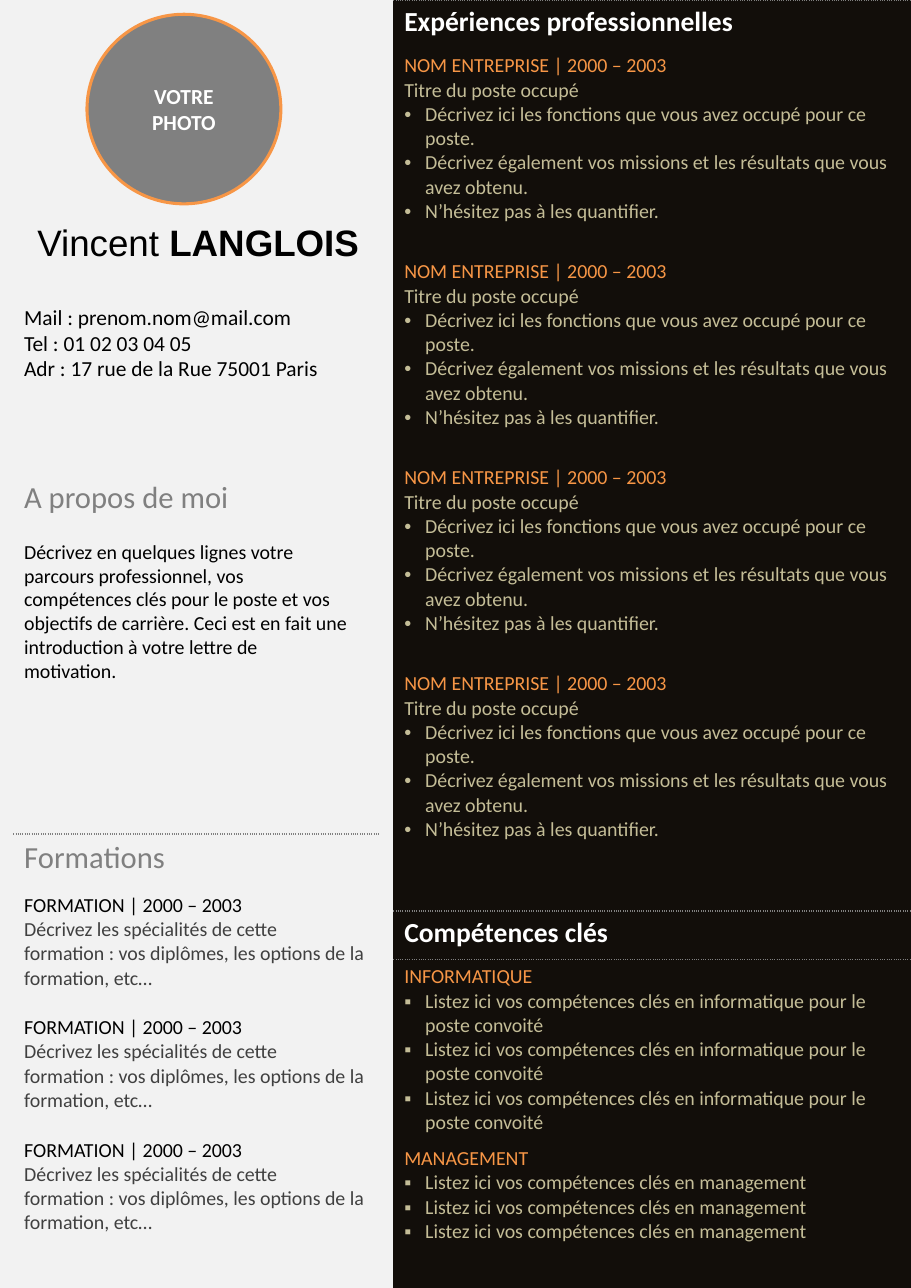
from lxml import etree
from pptx import Presentation
from pptx.dml.color import RGBColor
from pptx.enum.shapes import MSO_CONNECTOR, MSO_SHAPE
from pptx.enum.text import MSO_ANCHOR, PP_ALIGN
from pptx.oxml.ns import qn
from pptx.util import Pt

LINE = MSO_CONNECTOR.STRAIGHT
RECT, OVAL = MSO_SHAPE.RECTANGLE, MSO_SHAPE.OVAL
MIDDLE, CENTER = MSO_ANCHOR.MIDDLE, PP_ALIGN.CENTER
PLAIN = "{2D5ABB26-0587-4C30-8999-92F81FD0307C}"  # table style without grid

WIDE, HIGH = 595.44, 841.68
SPLIT = 257.04
HEAD, JOB, GAP = 31.68, 134.64, 25.2
INDENT = 13.68

COLORS = {
    "panel": "F2F2F2", "night": "120E0A", "accent": "F79646",
    "sand": "C4BD97", "gray": "808080", "rule": "7F7F7F",
    "dark": "404040", "black": "000000", "white": "FFFFFF",
}


def tint(name):
    return RGBColor.from_string(COLORS[name])


class Page:
    def __init__(self, slide, font="Calibri", size=13):
        self.shapes = slide.shapes
        self.font, self.size = font, size

    def span(self, par, text, color="black", size=None, bold=False, font=None):
        """Add one formatted run to a paragraph."""
        run = par.add_run()
        run.text = text
        run.font.name = font or self.font
        run.font.size = Pt(size or self.size)
        run.font.bold = bold
        run.font.color.rgb = tint(color)

    def text(self, frame, text, bullet=None, align=None, before=0, **style):
        """Add one paragraph, using the empty first one if it is free."""
        par = frame.paragraphs[-1]
        if par.runs:
            par = frame.add_paragraph()
        if align is not None:
            par.alignment = align
        if before:
            par.space_before = Pt(before)
        if bullet:
            props = par._p.get_or_add_pPr()
            props.set("marL", str(Pt(INDENT)))
            props.set("indent", str(-Pt(INDENT)))
            etree.SubElement(props, qn("a:buFont"), typeface="Arial")
            etree.SubElement(props, qn("a:buChar"), char=bullet)
        self.span(par, text, **style)
        return par

    def box(self, x, y, w, h, wrap=True):
        frame = self.shapes.add_textbox(Pt(x), Pt(y), Pt(w), Pt(h)).text_frame
        frame.word_wrap = wrap
        return frame

    def shape(self, kind, x, y, w, h, fill, edge=None, weight=2):
        shape = self.shapes.add_shape(kind, Pt(x), Pt(y), Pt(w), Pt(h))
        shape.shadow.inherit = False
        shape.fill.solid()
        shape.fill.fore_color.rgb = tint(fill)
        if edge:
            shape.line.color.rgb = tint(edge)
            shape.line.width = Pt(weight)
        else:
            shape.line.fill.background()
        return shape.text_frame

    def line(self, x1, y1, x2, y2, color, weight):
        line = self.shapes.add_connector(LINE, Pt(x1), Pt(y1), Pt(x2), Pt(y2))
        line.line.color.rgb = tint(color)
        line.line.width = Pt(weight)
        etree.SubElement(line._element.spPr, qn("a:effectLst"))

    def table(self, x, y, w, rows, fill=None):
        """Build a one-column table from (height, paragraphs, ruled) rows."""
        total = sum(row[0] for row in rows)
        table = self.shapes.add_table(
            len(rows), 1, Pt(x), Pt(y), Pt(w), Pt(total)).table
        table.first_row = table.horz_banding = False
        table._tbl.tblPr.find(qn("a:tableStyleId")).text = PLAIN
        for i, (height, lines, ruled) in enumerate(rows):
            table.rows[i].height = Pt(height)
            cell = table.cell(i, 0)
            if fill:
                cell.fill.solid()
                cell.fill.fore_color.rgb = tint(fill)
            else:
                cell.fill.background()
            if ruled:
                self.rule(cell)
            if not lines:
                cell.margin_top = cell.margin_bottom = 0
            for text, style in lines:
                self.text(cell.text_frame, text, **style)

    def rule(self, cell):
        """Draw a dotted top border."""
        edge = etree.Element(qn("a:lnT"), w=str(Pt(1)))
        paint = etree.SubElement(edge, qn("a:solidFill"))
        etree.SubElement(paint, qn("a:srgbClr"), val=COLORS["gray"])
        etree.SubElement(edge, qn("a:prstDash"), val="sysDot")
        cell._tc.get_or_add_tcPr().insert(0, edge)


def title(text):
    return HEAD, [(text, dict(size=18, bold=True, color="white"))], True


def skill(height, name, text):
    item = (text, dict(bullet="▪", color="sand"))
    return height, [(name, dict(color="accent"))] + [item] * 3, False


def main():
    deck = Presentation()
    deck.slide_width, deck.slide_height = Pt(WIDE), Pt(HIGH)
    page = Page(deck.slides.add_slide(deck.slide_layouts[6]))

    page.shape(RECT, 0, 0, SPLIT, HIGH, "panel")
    name = page.box(17.28, 140.4, 226.8, 36, wrap=False)
    par = page.text(name, "Vincent ", size=24, font="Arial")
    page.span(par, "LANGLOIS", size=24, font="Arial", bold=True)
    page.line(SPLIT, 0, SPLIT, HIGH, "rule", 0.5)

    tasks = [
        "Décrivez ici les fonctions que vous avez occupé pour ce poste.",
        "Décrivez également vos missions et les résultats que vous avez obtenu.",
        "N’hésitez pas à les quantifier.",
    ]
    job = [("NOM ENTREPRISE | 2000 – 2003", dict(color="accent")),
           ("Titre du poste occupé", dict(color="sand"))]
    job += [(task, dict(bullet="•", color="sand")) for task in tasks]
    empty = (GAP, [], False)
    page.table(SPLIT, 0, WIDE - SPLIT, [
        title("Expériences professionnelles"),
        *[(JOB, job, False)] * 4,
        empty,
        title("Compétences clés"),
        skill(118.8, "INFORMATIQUE", "Listez ici vos compétences clés en "
              "informatique pour le poste convoité"),
        skill(71.28, "MANAGEMENT",
              "Listez ici vos compétences clés en management"),
        empty,
    ], fill="night")

    course = [("FORMATION | 2000 – 2003", dict(color="black")),
              ("Décrivez les spécialités de cette formation : vos diplômes, "
               "les options de la formation, etc…", dict(color="dark"))]
    page.table(8.64, 545.04, 239.04, [
        (35.28, [("Formations", dict(size=20, color="gray"))], True),
        *[(79.92, course, False)] * 3,
    ])

    contact = page.box(8.64, 195.12, 223.2, 58.32)
    for text in ("Mail : prenom.nom@mail.com", "Tel : 01 02 03 04 05",
                 "Adr : 17 rue de la Rue 75001 Paris"):
        page.text(contact, text, size=14)

    about = page.box(8.64, 308.88, 226.8, 141.84)
    page.text(about, "A propos de moi", size=20, color="gray")
    page.text(about, "Décrivez en quelques lignes votre parcours "
              "professionnel, vos compétences clés pour le poste et vos "
              "objectifs de carrière. Ceci est en fait une introduction à "
              "votre lettre de motivation.", before=16)

    photo = page.shape(OVAL, 56.88, 9.36, 126.72, 123.84, "gray", "accent")
    photo.vertical_anchor = MIDDLE
    for text in ("VOTRE", "PHOTO"):
        page.text(photo, text, align=CENTER, size=14, bold=True,
                  color="white")

    deck.save("out.pptx")


if __name__ == "__main__":
    main()
